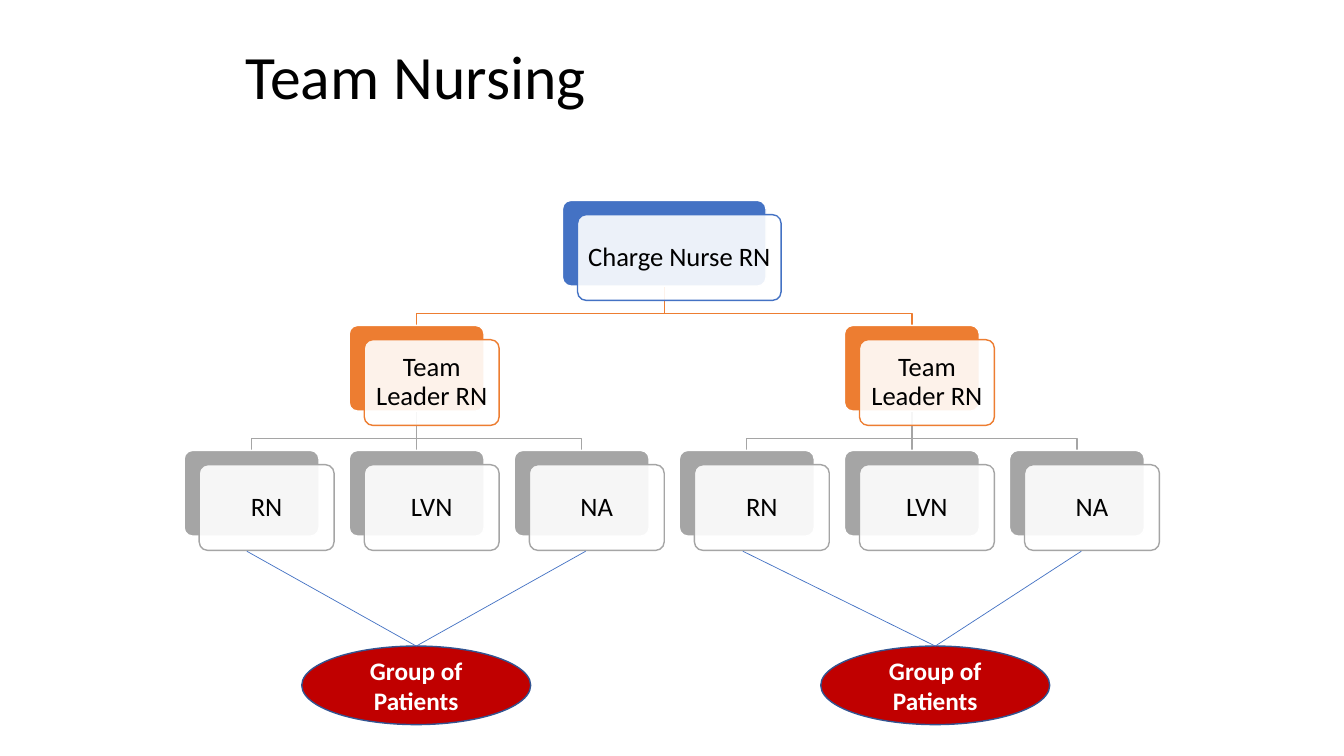
from lxml import etree
from pptx import Presentation
from pptx.dml.color import RGBColor
from pptx.enum.shapes import MSO_CONNECTOR, MSO_SHAPE
from pptx.enum.text import MSO_ANCHOR, PP_ALIGN
from pptx.oxml.ns import qn
from pptx.util import Cm, Pt

STRAIGHT = MSO_CONNECTOR.STRAIGHT
ROUNDED = MSO_SHAPE.ROUNDED_RECTANGLE
ELLIPSE = MSO_SHAPE.OVAL
MIDDLE = MSO_ANCHOR.MIDDLE
LEFT, CENTER = PP_ALIGN.LEFT, PP_ALIGN.CENTER

BLACK = RGBColor(0x00, 0x00, 0x00)
WHITE = RGBColor(0xFF, 0xFF, 0xFF)
BLUE = RGBColor(0x44, 0x72, 0xC4)
NAVY = RGBColor(0x32, 0x54, 0x91)
ORANGE = RGBColor(0xED, 0x7D, 0x31)
GRAY = RGBColor(0xA5, 0xA5, 0xA5)
RED = RGBColor(0xC0, 0x00, 0x00)

CARD_HEIGHT, ROW_PITCH = 2.16, 3.15
CHARGE_WIDTH, MEMBER_WIDTH = 5.13, 3.4
CHARGE_TOP, LEADER_TOP, STAFF_TOP = (5.05 + ROW_PITCH * row for row in range(3))
COLUMNS = [6.34 + 4.16 * column for column in range(6)]
TEAMS = [COLUMNS[:3], COLUMNS[3:]]
CHARGE_X = (COLUMNS[0] + COLUMNS[-1]) / 2
ROLES = ["RN", "LVN", "NA"]
PATIENTS_TOP, PATIENT_LINE_TOP = 16.28, 13.89
PATIENT_GROUPS = [(10.49, (6.22, 14.76)), (23.57, (18.72, 27.25))]


class TeamSlide:
    font = "Calibri"

    def __init__(self, presentation):
        self.slide = presentation.slides.add_slide(presentation.slide_layouts[5])
        self.shapes = self.slide.shapes

    def add_text(self, shape, text, size, color, align, spacing=1.0, bold=False):
        frame = shape.text_frame
        frame.word_wrap = True
        frame.vertical_anchor = MIDDLE
        paragraph = frame.paragraphs[0]
        paragraph.alignment = align
        paragraph.line_spacing = spacing
        run = paragraph.add_run()
        run.text = text
        run.font.name = self.font
        run.font.size = Pt(size)
        run.font.bold = bold
        run.font.color.rgb = color

    def add_title(self, text):
        title = self.slide.shapes.title
        title.left, title.top = Cm(5.94), Cm(0.64)
        title.width, title.height = Cm(22.66), Cm(2.74)
        self.add_text(title, text, 44, BLACK, LEFT, 0.9)

    def add_shape(self, kind, left, top, width, height, fill, line):
        shape = self.shapes.add_shape(kind, Cm(left), Cm(top), Cm(width), Cm(height))
        shape.shadow.inherit = False
        shape.fill.solid()
        shape.fill.fore_color.rgb = fill
        shape.line.color.rgb = line
        shape.line.width = Pt(1)
        return shape

    def add_card(self, center, top, width, color, text):
        left = center - width / 2
        back = self.add_shape(ROUNDED, left, top, width, CARD_HEIGHT, color, WHITE)
        front = self.add_shape(ROUNDED, left + 0.38, top + 0.36, width, CARD_HEIGHT, WHITE, color)
        for layer in (back, front):
            layer.adjustments[0] = 0.1
        fill_color = front._element.spPr.find(qn("a:solidFill"))[0]
        etree.SubElement(fill_color, qn("a:alpha")).set("val", "90000")
        frame = front.text_frame
        frame.margin_left = frame.margin_right = Cm(0.18)
        frame.margin_top = frame.margin_bottom = Cm(0.2)
        self.add_text(front, text, 19, BLACK, CENTER, 0.9)

    def add_line(self, start, end, color, width):
        line = self.shapes.add_connector(STRAIGHT, *(Cm(value) for value in start + end))
        line.line.color.rgb = color
        line.line.width = Pt(width)
        etree.SubElement(line._element.spPr, qn("a:effectLst"))

    def add_branch(self, parent_x, child_x, child_top, color):
        start = (parent_x, child_top - ROW_PITCH + CARD_HEIGHT)
        end = (child_x, child_top)
        if parent_x == child_x:
            self.add_line(start, end, color, 1)
            return
        bend = child_top - 0.3
        points = [(parent_x, bend), (child_x, bend), end]
        builder = self.shapes.build_freeform(Cm(start[0]), Cm(start[1]))
        builder.add_line_segments([(Cm(x), Cm(y)) for x, y in points], close=False)
        branch = builder.convert_to_shape()
        branch.shadow.inherit = False
        branch.fill.background()
        branch.line.color.rgb = color
        branch.line.width = Pt(1)

    def add_organization(self):
        self.shapes = self.slide.shapes.add_group_shape().shapes
        for team in TEAMS:
            leader_x = team[1]
            self.add_branch(CHARGE_X, leader_x, LEADER_TOP, ORANGE)
            for staff_x in team:
                self.add_branch(leader_x, staff_x, STAFF_TOP, GRAY)
        self.add_card(CHARGE_X, CHARGE_TOP, CHARGE_WIDTH, BLUE, "Charge Nurse RN")
        for team in TEAMS:
            self.add_card(team[1], LEADER_TOP, MEMBER_WIDTH, ORANGE, "Team Leader RN")
            for staff_x, role in zip(team, ROLES):
                self.add_card(staff_x, STAFF_TOP, MEMBER_WIDTH, GRAY, role)
        self.shapes = self.slide.shapes

    def add_patients(self, center, staff_ends):
        width = 5.77
        ellipse = self.add_shape(ELLIPSE, center - width / 2, PATIENTS_TOP, width, 1.98, RED, NAVY)
        self.add_text(ellipse, "Group of Patients", 18, WHITE, CENTER, bold=True)
        for staff_x in staff_ends:
            self.add_line((staff_x, PATIENT_LINE_TOP), (center, PATIENTS_TOP), BLUE, 0.5)


def main():
    presentation = Presentation()
    presentation.slide_width, presentation.slide_height = Cm(33.87), Cm(19.05)
    slide = TeamSlide(presentation)
    slide.add_title("Team Nursing")
    slide.add_organization()
    for center, staff_ends in PATIENT_GROUPS:
        slide.add_patients(center, staff_ends)
    presentation.save("out.pptx")


if __name__ == "__main__":
    main()
